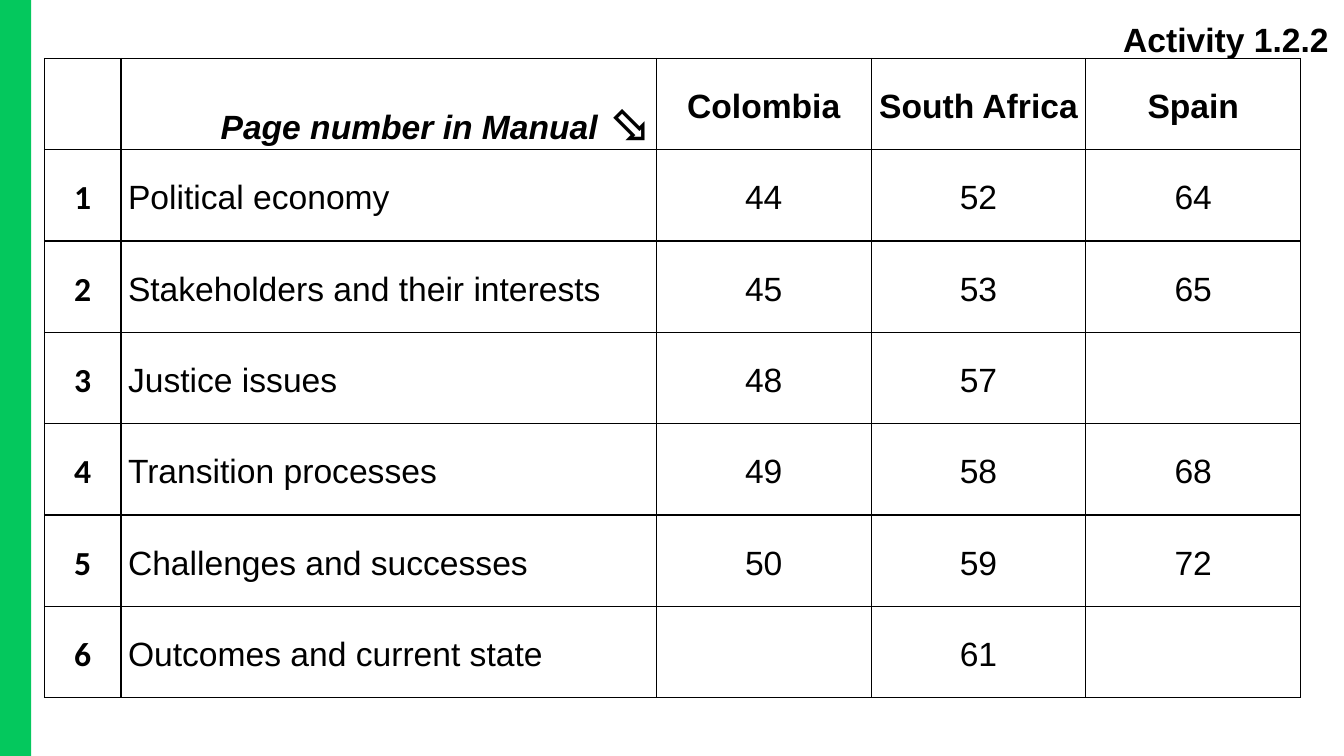
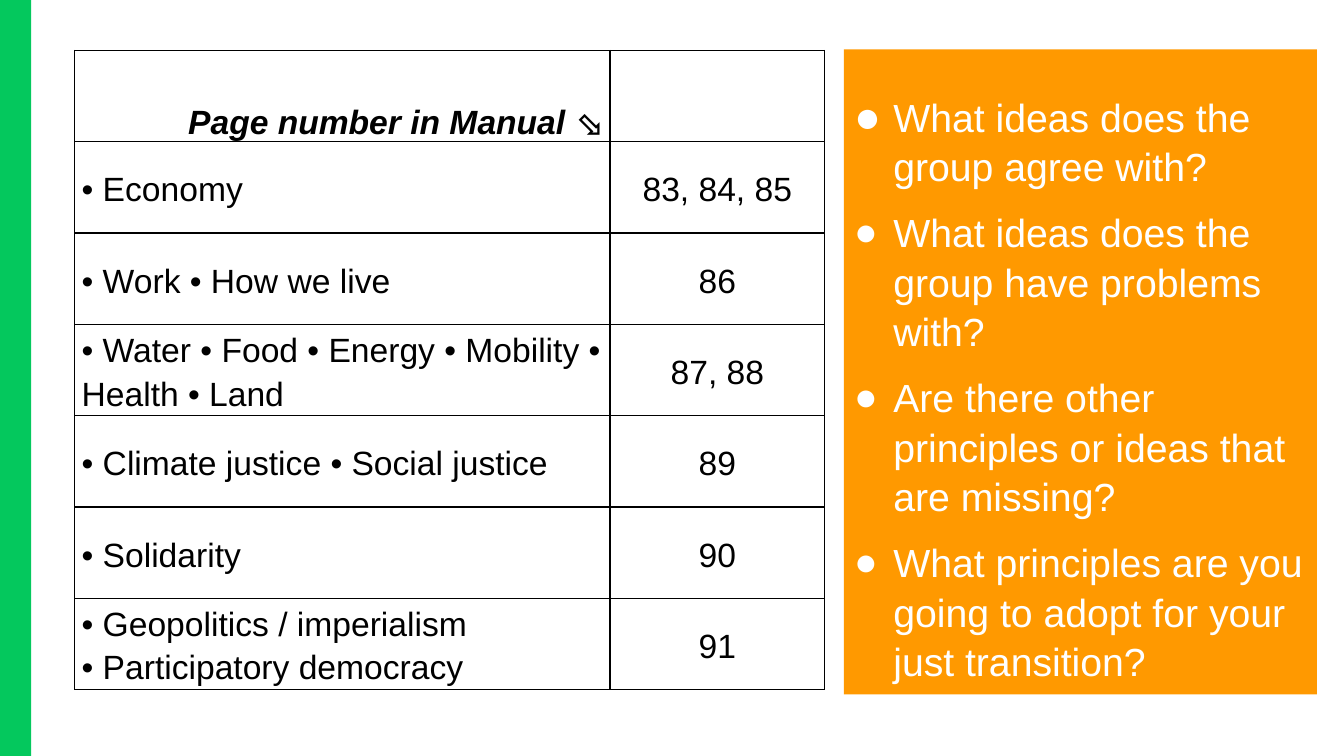
from dataclasses import dataclass

from lxml import etree
from pptx import Presentation
from pptx.dml.color import RGBColor
from pptx.enum import shapes, text
from pptx.oxml import ns
from pptx.util import Inches, Pt


@dataclass(frozen=True)
class Theme:
    green: RGBColor = RGBColor.from_string("04C85D")
    orange: RGBColor = RGBColor.from_string("FF9900")
    black: RGBColor = RGBColor.from_string("000000")
    white: RGBColor = RGBColor.from_string("FFFFFF")
    font: str = "Arial"
    number_font: str = "Calibri"
    table_size: int = 24
    arrow_size: int = 36
    question_size: int = 28


@dataclass(frozen=True)
class CellStyle:
    align: text.PP_ALIGN = text.PP_ALIGN.CENTER
    anchor: text.MSO_ANCHOR = text.MSO_ANCHOR.MIDDLE
    font: str = Theme.font
    bold: bool = False
    italic: bool = False


PAGES = CellStyle()
TOPIC = CellStyle(align=text.PP_ALIGN.LEFT)
NUMBER = CellStyle(font=Theme.number_font, bold=True)
COUNTRY = CellStyle(bold=True)
MANUAL = CellStyle(text.PP_ALIGN.RIGHT, text.MSO_ANCHOR.BOTTOM, bold=True, italic=True)

ROW_HEIGHT = 0.906
NUMBER_WIDTH, TOPIC_WIDTH, PAGES_WIDTH = 0.76, 5.31, 2.13

COUNTRY_ROWS = [
    ("", "Page number in Manual ", "Colombia", "South Africa", "Spain"),
    ("1", "Political economy", "44", "52", "64"),
    ("2", "Stakeholders and their interests", "45", "53", "65"),
    ("3", "Justice issues", "48", "57", ""),
    ("4", "Transition processes", "49", "58", "68"),
    ("5", "Challenges and successes", "50", "59", "72"),
    ("6", "Outcomes and current state", "", "61", ""),
]
PRINCIPLE_ROWS = [
    ("Page number in Manual ⬂", ""),
    ("• Economy", "83, 84, 85"),
    ("• Work • How we live", "86"),
    ("• Water • Food • Energy • Mobility • Health • Land", "87, 88"),
    ("• Climate justice • Social justice", "89"),
    ("• Solidarity", "90"),
    ("• Geopolitics / imperialism\n• Participatory democracy", "91"),
]
QUESTIONS = [
    "What ideas does the group agree with?",
    "What ideas does the group have problems with?",
    "Are there other principles or ideas that are missing?",
    "What principles are you going to adopt for your just transition?",
]


def place(shape, left, top, width, height):
    shape.left, shape.top = Inches(left), Inches(top)
    shape.width, shape.height = Inches(width), Inches(height)


def set_font(font, size, color, name=Theme.font, bold=False, italic=False):
    font.name, font.size, font.bold, font.italic = name, Pt(size), bold, italic
    font.color.rgb = color


def add_master_band(prs, slide):
    """Draw the green side band once, on the slide master."""
    band = slide.shapes.add_shape(shapes.MSO_SHAPE.RECTANGLE, Inches(-0.01), 0,
                                  Inches(0.32), prs.slide_height)
    band.shadow.inherit = False
    band.fill.solid()
    band.fill.fore_color.rgb = Theme.green
    band.line.fill.background()
    prs.slide_master.shapes.element.insert(2, band.element)


def add_borders(cell):
    properties = cell._tc.get_or_add_tcPr()
    for index, side in enumerate(("lnL", "lnR", "lnT", "lnB")):
        line = etree.Element(ns.qn("a:" + side), w=str(Pt(1)))
        fill = etree.SubElement(line, ns.qn("a:solidFill"))
        etree.SubElement(fill, ns.qn("a:srgbClr"), val=str(Theme.black))
        properties.insert(index, line)


def fill_cell(cell, wording, style):
    cell.fill.solid()
    cell.fill.fore_color.rgb = Theme.white
    add_borders(cell)
    cell.margin_left = cell.margin_right = Inches(0.07)
    cell.margin_top = cell.margin_bottom = 0
    cell.vertical_anchor = style.anchor
    paragraph = cell.text_frame.paragraphs[0]
    paragraph.text = wording
    paragraph.alignment = style.align
    paragraph.line_spacing = 1.15
    paragraph.space_after = Pt(10)
    set_font(paragraph.font, Theme.table_size, Theme.black,
             style.font, style.bold, style.italic)


def add_page_table(slide, left, top, widths, rows, header_styles, body_styles):
    frame = slide.shapes.add_table(len(rows), len(widths), Inches(left), Inches(top),
                                   Inches(sum(widths)), Inches(ROW_HEIGHT * len(rows)))
    table = frame.table
    table.first_row = table.horz_banding = False
    for column, width in zip(table.columns, widths):
        column.width = Inches(width)
    for r, row in enumerate(rows):
        table.rows[r].height = Inches(ROW_HEIGHT)
        styles = body_styles if r else header_styles
        for c, (wording, style) in enumerate(zip(row, styles)):
            fill_cell(table.cell(r, c), wording, style)
    return table


def fill_title(title, wording, left, top, width, height):
    place(title, left, top, width, height)
    frame = title.text_frame
    frame.text = wording
    frame.auto_size = text.MSO_AUTO_SIZE.NONE
    frame.vertical_anchor = text.MSO_ANCHOR.TOP
    paragraph = frame.paragraphs[0]
    paragraph.alignment = text.PP_ALIGN.LEFT
    set_font(paragraph.font, Theme.table_size, Theme.black, bold=True)


def add_bullet(paragraph, size_percent):
    properties = paragraph._p.get_or_add_pPr()
    properties.set("marL", str(Inches(0.39)))
    properties.set("indent", str(-Inches(0.39)))
    for tag, attributes in (("buSzPct", {"val": str(size_percent * 1000)}),
                            ("buFont", {"typeface": Theme.font}),
                            ("buChar", {"char": "●"})):
        etree.SubElement(properties, ns.qn("a:" + tag), attributes)


def fill_questions(panel, questions, left, top, width, height):
    place(panel, left, top, width, height)
    panel.fill.solid()
    panel.fill.fore_color.rgb = Theme.orange
    frame = panel.text_frame
    frame.auto_size = text.MSO_AUTO_SIZE.NONE
    frame.vertical_anchor = text.MSO_ANCHOR.TOP
    frame.margin_top = Inches(0.41)
    for index, question in enumerate(questions):
        paragraph = frame.add_paragraph() if index else frame.paragraphs[0]
        paragraph.text = question
        add_bullet(paragraph, 100 if index else 114)
        paragraph.alignment = text.PP_ALIGN.LEFT
        paragraph.line_spacing = 1.05
        paragraph.space_before = Pt(12 if index else 0)
        set_font(paragraph.font, Theme.question_size, Theme.white)


def build_country_slide(prs):
    slide = prs.slides.add_slide(prs.slide_layouts[5])
    # Page table by country, with a larger arrow in its header
    table = add_page_table(
        slide, 0.44, 0.58, [NUMBER_WIDTH, TOPIC_WIDTH] + [PAGES_WIDTH] * 3, COUNTRY_ROWS,
        [NUMBER, MANUAL] + [COUNTRY] * 3, [NUMBER, TOPIC] + [PAGES] * 3)
    arrow = table.cell(0, 1).text_frame.paragraphs[0].add_run()
    arrow.text = "⬂"
    arrow.font.size = Pt(Theme.arrow_size)
    # Activity title
    fill_title(slide.shapes.title, "Activity 1.2.2", 11.04, 0.14, 2.3, 0.5)
    return slide


def build_principles_slide(prs):
    slide = prs.slides.add_slide(prs.slide_layouts[1])
    title = slide.shapes.title.element
    title.getparent().remove(title)
    # Page table by principle
    add_page_table(slide, 0.74, 0.5, [TOPIC_WIDTH, PAGES_WIDTH], PRINCIPLE_ROWS,
                   [MANUAL, PAGES], [TOPIC, PAGES])
    # Discussion questions
    fill_questions(slide.placeholders[1], QUESTIONS, 8.37, 0.49, 4.69, 6.4)


def main():
    prs = Presentation()
    prs.slide_width, prs.slide_height = Inches(13.33), Inches(7.5)
    country_slide = build_country_slide(prs)
    add_master_band(prs, country_slide)
    build_principles_slide(prs)
    prs.save("out.pptx")


if __name__ == "__main__":
    main()
